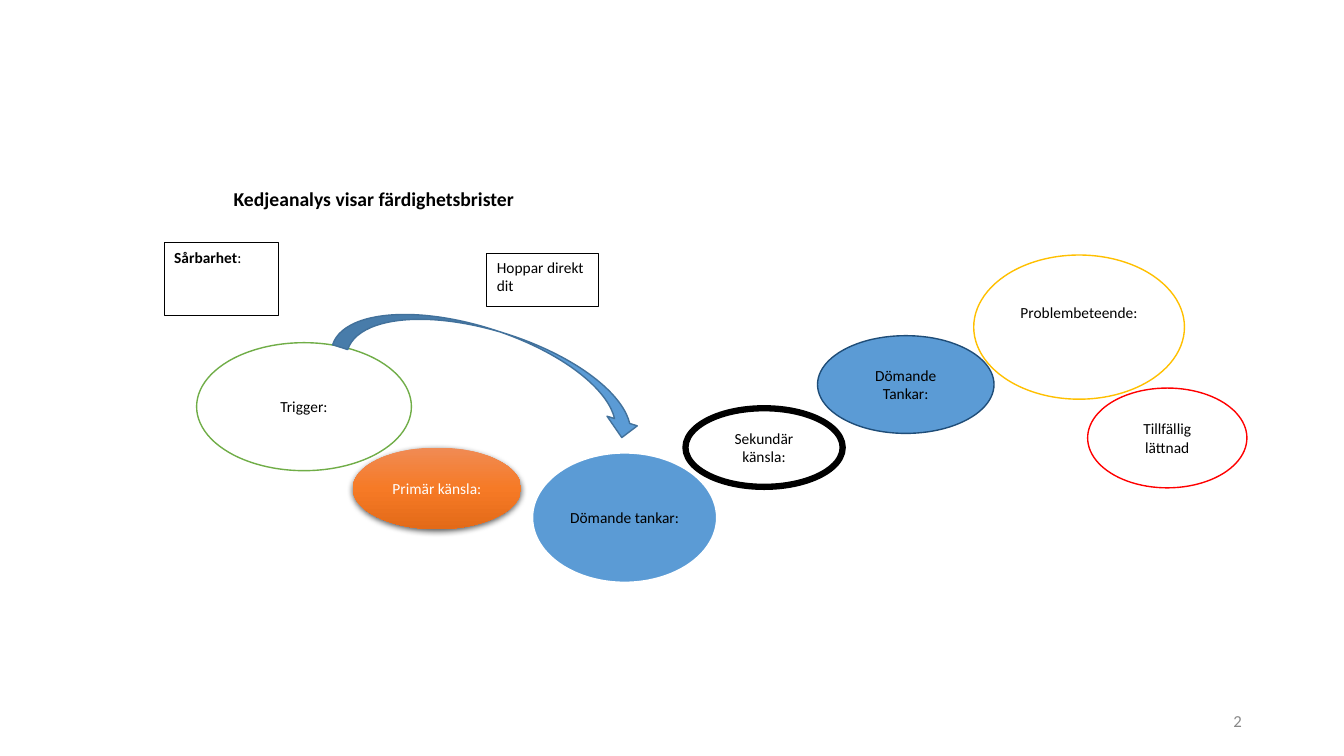
"""Build a slide showing a chain analysis as a row of linked ellipses."""
from copy import deepcopy

from lxml import etree
from pptx import Presentation
from pptx.dml.color import RGBColor
from pptx.enum.shapes import MSO_SHAPE as Shape
from pptx.enum.text import MSO_ANCHOR as Anchor, PP_ALIGN as Align
from pptx.oxml.ns import qn
from pptx.util import Inches, Pt

COLORS = {
    "black": "000000", "white": "FFFFFF", "gray": "888888", "green": "70AD47",
    "blue": "5B9BD5", "navy": "1F4D78", "steel": "42719B", "yellow": "FFC000",
    "red": "FF0000", "light orange": "F08B54", "orange": "F67A26", "dark orange": "E36A18",
}

deck = Presentation()
deck.slide_width, deck.slide_height = Inches(13.33), Inches(7.5)
page = deck.slides.add_slide(deck.slide_layouts[6])


def color(name):
    return RGBColor.from_string(COLORS[name])


def add_box(text, kind, area, fill=None, line=None, weight=1, size=11, ink="black",
            bold=0, align=Align.CENTER, anchor=Anchor.MIDDLE, top=0.05, bottom=0.05):
    """Place a shape by percent of the slide; the first `bold` characters are bold."""
    left, upper, width, height = (
        round(share / 100 * side)
        for share, side in zip(area, (deck.slide_width, deck.slide_height) * 2))
    if kind is None:
        box = page.shapes.add_textbox(left, upper, width, height)
    else:
        box = page.shapes.add_shape(kind, left, upper, width, height)
        box.shadow.inherit = False
        if fill:
            box.fill.solid()
            box.fill.fore_color.rgb = color(fill)
        if line:
            box.line.color.rgb = color(line)
            box.line.width = Pt(weight)
        else:
            box.line.fill.background()
    frame = box.text_frame
    frame.word_wrap = True
    frame.vertical_anchor = anchor
    frame.margin_left = frame.margin_right = Inches(0.1)
    frame.margin_top, frame.margin_bottom = Inches(top), Inches(bottom)
    para = frame.paragraphs[0]
    para.alignment = align
    for part, heavy in ((text[:bold], True), (text[bold:], False)):
        if part:
            span = para.add_run()
            span.text = part
            span.font.name, span.font.size, span.font.bold = "Calibri", Pt(size), heavy
            span.font.color.rgb = color(ink)
    return box


note = {"fill": "white", "line": "black", "weight": 0.75, "align": Align.LEFT, "anchor": Anchor.TOP}
add_box("Sårbarhet:", Shape.RECTANGLE, (12.22, 32.13, 8.48, 9.6), bold=len("Sårbarhet"), **note)

chain = [
    ("Trigger:", (14.63, 45.33, 15.98, 16.93), {"fill": "white", "line": "green"}),
    ("Primär känsla:", (26.25, 59.2, 12.53, 10.8), {"ink": "white"}),
    ("Dömande tankar:", (39.6, 59.87, 13.75, 17.2), {"fill": "blue", "line": "white", "weight": 1.5}),
    ("Sekundär känsla:", (51, 54, 11.7, 10.4), {"fill": "white", "line": "black", "weight": 4.5}),
    ("Dömande Tankar:", (60.83, 44.4, 13.13, 12.93), {"fill": "blue", "line": "navy"}),
    ("Problembeteende:", (72.45, 33.73, 15.68, 19.07),
     {"fill": "white", "line": "yellow", "bottom": 0.35}),
    ("Tillfällig lättnad", (80.93, 51.33, 11.85, 13.2), {"fill": "white", "line": "red"}),
]
links = {text: add_box(text, Shape.OVAL, area, **style) for text, area, style in chain}

feeling = links["Primär känsla:"]
feeling.fill.gradient()
feeling.fill.gradient_angle = 270
stop_list = feeling.element.spPr.find(".//" + qn("a:gsLst"))
stop_list.append(deepcopy(stop_list[0]))
shades = ("light orange", "orange", "dark orange")
for index, (stop, shade) in enumerate(zip(feeling.fill.gradient_stops, shades)):
    stop.position = index / 2
    stop.color.rgb = color(shade)

effects = feeling.element.spPr.find(qn("a:effectLst"))
shadow = etree.SubElement(effects, qn("a:outerShdw"), blurRad=str(Pt(4.5)), dist=str(Pt(1.5)),
                          dir="5400000", algn="ctr", rotWithShape="0")
shadow_color = etree.SubElement(shadow, qn("a:srgbClr"), val=COLORS["black"])
etree.SubElement(shadow_color, qn("a:alpha"), val="63000")

jump = add_box("", Shape.CURVED_DOWN_ARROW, (24.9, 43.87, 23.78, 8.4), fill="blue", line="steel")
jump.rotation = 17.8
add_box("Hoppar direkt dit", Shape.RECTANGLE, (36.23, 33.47, 8.33, 7.07), **note)

title = "Kedjeanalys visar färdighetsbrister"
add_box(title, None, (16.65, 24.67, 100, 6.67), size=14, bold=len(title),
        align=Align.LEFT, anchor=Anchor.TOP, top=0)
add_box("2", None, (70.65, 92.67, 22.5, 5.33), size=12, ink="gray", align=Align.RIGHT)

deck.save("out.pptx")
